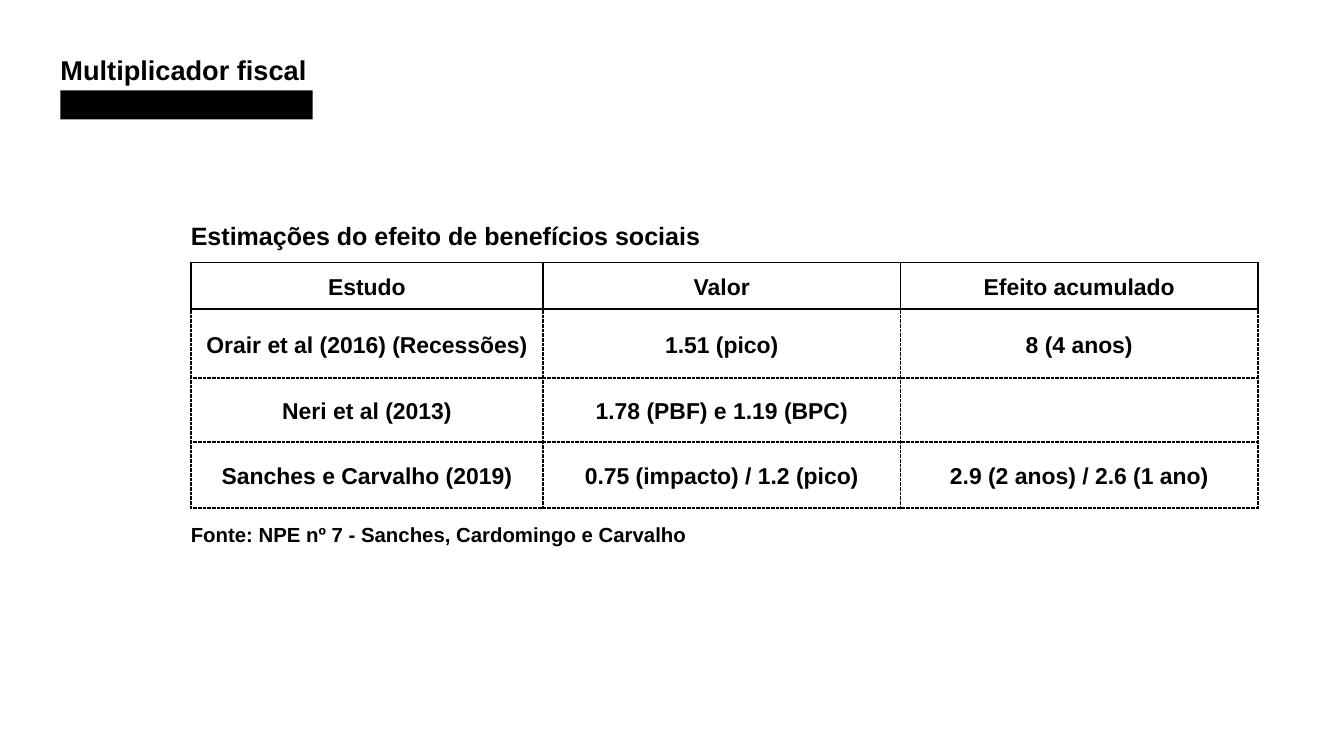
from dataclasses import dataclass

from lxml.etree import SubElement
from pptx import Presentation
from pptx.dml.color import RGBColor
from pptx.enum.shapes import MSO_SHAPE
from pptx.enum.text import MSO_ANCHOR, PP_ALIGN
from pptx.oxml.ns import qn
from pptx.util import Inches, Pt


@dataclass(frozen=True)
class Theme:
    font: str = "Arial"
    ink: RGBColor = RGBColor(0, 0, 0)
    title: float = 32
    caption: float = 29.5
    cell: float = 27
    source: float = 24
    border: float = 2.25


@dataclass(frozen=True)
class Box:
    x: int
    y: int
    w: int
    h: int

    def inner(self, x, y, w, h):
        """Return the box lying at the given shares of this one."""
        return Box(int(self.x + x * self.w), int(self.y + y * self.h),
                   int(w * self.w), int(h * self.h))

    def place(self, sp):
        sp.left, sp.top, sp.width, sp.height = self.x, self.y, self.w, self.h


THEME = Theme()
SLIDE = Box(0, 0, Inches(21.99), Inches(12.37))
PERCENT = 0.01
HEADERS = ("Estudo", "Valor", "Efeito acumulado")
STUDIES = (
    ("Orair et al (2016) (Recessões)", "1.51 (pico)", "8 (4 anos)"),
    ("Neri et al (2013)", "1.78 (PBF) e 1.19 (BPC)", ""),
    ("Sanches e Carvalho (2019)", "0.75 (impacto) / 1.2 (pico)", "2.9 (2 anos) / 2.6 (1 ano)"),
)
COLUMN_PERCENTS = (33, 33.5, 33.5)
ROW_PERCENTS = (19, 28, 26, 27)


def write(tf, text, size, align=PP_ALIGN.LEFT, spacing=1.01):
    p = tf.paragraphs[0]
    p.text = text
    p.alignment, p.line_spacing = align, spacing
    p.font.name, p.font.size, p.font.bold = THEME.font, Pt(size), True
    p.font.color.rgb = THEME.ink


def fill_line(sp, box, text, size):
    """Set one left-aligned line of text in a placeholder or text box."""
    box.place(sp)
    tf = sp.text_frame
    tf.word_wrap = True
    tf.vertical_anchor = MSO_ANCHOR.TOP
    tf.margin_left = tf.margin_right = tf.margin_bottom = 0
    tf.margin_top = Inches(0.01)
    write(tf, text, size)


def add_heading(s, box):
    # Title
    fill_line(s.shapes.title, box.inner(0, 0, 1, 0.5), "Multiplicador fiscal", THEME.title)
    # Bar under the title
    bar_box = box.inner(0, 0.57, 0.34, 0.43)
    bar = s.shapes.add_shape(MSO_SHAPE.RECTANGLE, bar_box.x, bar_box.y, bar_box.w, bar_box.h)
    bar.shadow.inherit = False
    bar.fill.solid()
    bar.fill.fore_color.rgb = THEME.ink
    bar.line.fill.background()


def set_borders(cell, dashes):
    """Draw the cell's left, right, top and bottom borders with the given dashes."""
    tc_pr = cell._tc.get_or_add_tcPr()
    for side, dash in zip("LRTB", dashes):
        ln = SubElement(tc_pr, qn(f"a:ln{side}"), w=str(Pt(THEME.border)))
        fill = SubElement(ln, qn("a:solidFill"))
        SubElement(fill, qn("a:srgbClr"), val=str(THEME.ink))
        SubElement(ln, qn("a:prstDash"), val=dash)


def add_studies_table(s, box):
    rows = (HEADERS, *STUDIES)
    frame = s.shapes.add_table(len(rows), len(HEADERS), box.x, box.y, box.w, box.h)
    table = frame.table
    table.first_row = table.horz_banding = False
    for column, percent in zip(table.columns, COLUMN_PERCENTS):
        column.width = int(percent * PERCENT * box.w)
    for row, percent in zip(table.rows, ROW_PERCENTS):
        row.height = int(percent * PERCENT * box.h)

    for i, texts in enumerate(rows):
        # Solid lines around the header, dotted ones below it
        line = "solid" if i == 0 else "sysDot"
        top = "solid" if i <= 1 else "sysDot"
        for j, text in enumerate(texts):
            cell = table.cell(i, j)
            cell.vertical_anchor = MSO_ANCHOR.MIDDLE
            cell.margin_left = cell.margin_right = Inches(0.07)
            cell.margin_top = cell.margin_bottom = Inches(0.07)
            set_borders(cell, (line, line, top, line))
            cell.fill.background()
            write(cell.text_frame, text, THEME.cell, PP_ALIGN.CENTER, 1.15)


def add_studies(s, box):
    # Caption above and source below the table
    lines = (
        (0, 0.1, "Estimações do efeito de benefícios sociais", THEME.caption),
        (0.92, 0.08, "Fonte: NPE nº 7 - Sanches, Cardomingo e Carvalho", THEME.source),
    )
    for y, h, text, size in lines:
        fill_line(s.shapes.add_textbox(0, 0, 0, 0), box.inner(0, y, 0.7, h), text, size)
    # Table
    add_studies_table(s, box.inner(0, 0.13, 1, 0.75))


def slide_box(*percents):
    return SLIDE.inner(*(percent * PERCENT for percent in percents))


def main():
    prs = Presentation()
    prs.slide_width, prs.slide_height = SLIDE.w, SLIDE.h
    title_only = prs.slide_layouts[5]
    s = prs.slides.add_slide(title_only)
    add_heading(s, slide_box(4.5, 6.9, 55.2, 8.9))
    add_studies(s, slide_box(14.2, 29.1, 79.4, 43.3))
    prs.save("out.pptx")


if __name__ == "__main__":
    main()
